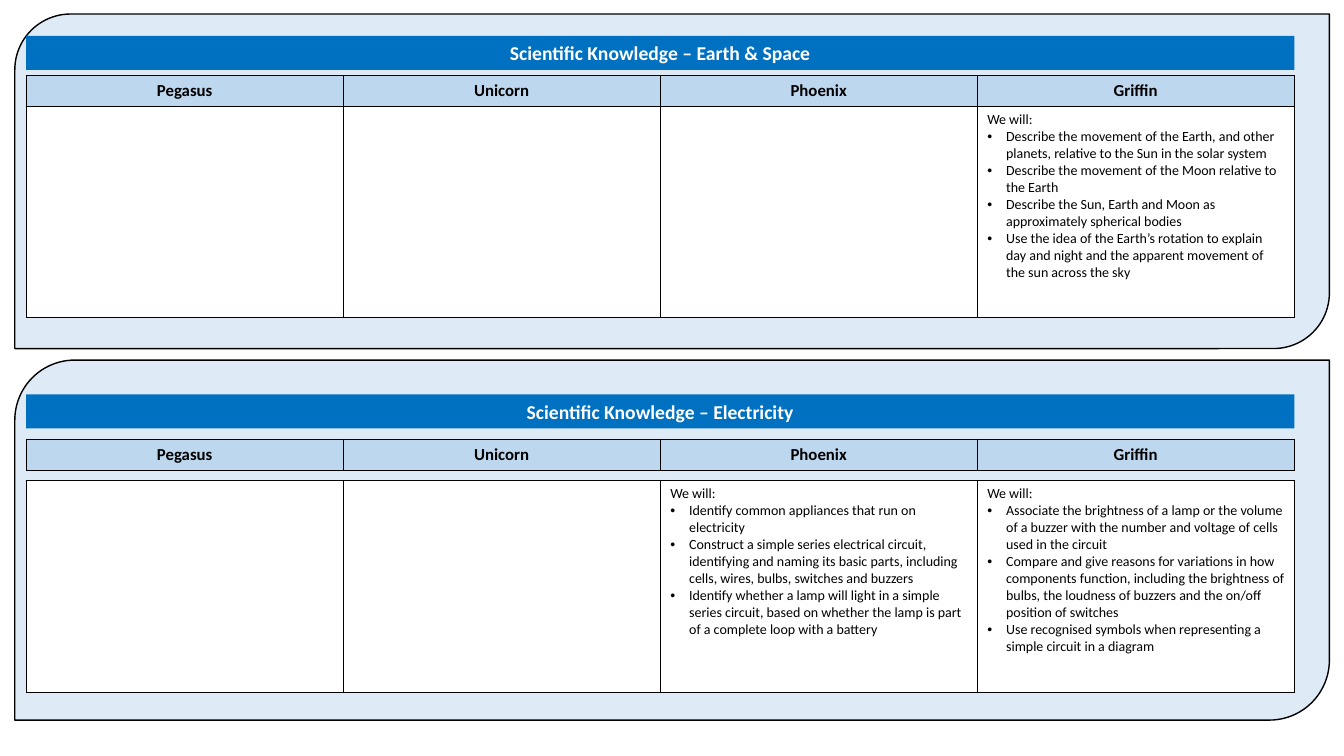
from pptx import Presentation
from pptx.dml.color import RGBColor
from pptx.enum.shapes import MSO_SHAPE as Shape
from pptx.enum.text import MSO_ANCHOR as Anchor, PP_ALIGN as Align
from pptx.oxml import parse_xml
from pptx.oxml.ns import nsdecls
from pptx.util import Pt

BLACK = RGBColor(0x00, 0x00, 0x00)
WHITE = RGBColor(0xFF, 0xFF, 0xFF)
BLUE = RGBColor(0x00, 0x70, 0xC0)
PALE_BLUE = RGBColor(0xDE, 0xEB, 0xF7)
HEADER_BLUE = RGBColor(0xBD, 0xD7, 0xEE)

LEFT, COLUMN_WIDTH = 18.7, 226.45
PANEL_LEFT, PANEL_WIDTH = 10.6, 939
BAR_HEIGHT, HEADER_HEIGHT, BODY_HEIGHT = 24.3, 21.6, 151.2
CLASSES = ["Pegasus", "Unicorn", "Phoenix", "Griffin"]

# Each section: panel top and height, tops of bar, header and body, title, aims by class
SECTIONS = [
    (10, 239, 25.7, 53.8, 75.8, "Scientific Knowledge – Earth & Space", {
        "Griffin": [
            "Describe the movement of the Earth, and other planets, relative to the Sun in the solar system",
            "Describe the movement of the Moon relative to the Earth",
            "Describe the Sun, Earth and Moon as approximately spherical bodies",
            "Use the idea of the Earth’s rotation to explain day and night and the apparent "
            "movement of the sun across the sky",
        ],
    }),
    (257.2, 257.2, 281.7, 313.8, 343.2, "Scientific Knowledge – Electricity", {
        "Phoenix": [
            "Identify common appliances that run on electricity",
            "Construct a simple series electrical circuit, identifying and naming its basic parts, "
            "including cells, wires, bulbs, switches and buzzers",
            "Identify whether a lamp will light in a simple series circuit, based on whether the "
            "lamp is part of a complete loop with a battery",
        ],
        "Griffin": [
            "Associate the brightness of a lamp or the volume of a buzzer with the number and "
            "voltage of cells used in the circuit",
            "Compare and give reasons for variations in how components function, including the "
            "brightness of bulbs, the loudness of buzzers and the on/off position of switches",
            "Use recognised symbols when representing a simple circuit in a diagram",
        ],
    }),
]


def write(paragraph, text, size, color, bold=False):
    paragraph.text = text
    paragraph.font.name = "Calibri"
    paragraph.font.size = Pt(size)
    paragraph.font.bold = bold
    paragraph.font.color.rgb = color


def add_row(top, height, fill):
    """Add a one-row table with thin black borders and return its cells."""
    table = slide.shapes.add_table(
        1, len(CLASSES), Pt(LEFT), Pt(top), Pt(COLUMN_WIDTH * len(CLASSES)), Pt(height)).table
    table.first_row = table.horz_banding = False
    for cell in table.iter_cells():
        properties = cell._tc.get_or_add_tcPr()
        for side in ("lnL", "lnR", "lnT", "lnB"):
            properties.append(parse_xml(
                f'<a:{side} {nsdecls("a")} w="{Pt(0.5)}"><a:solidFill>'
                f'<a:srgbClr val="{BLACK}"/></a:solidFill></a:{side}>'))
        cell.fill.solid()
        cell.fill.fore_color.rgb = fill
    return list(table.iter_cells())


presentation = Presentation()
presentation.slide_width, presentation.slide_height = Pt(960), Pt(540)
slide = presentation.slides.add_slide(presentation.slide_layouts[6])

for panel_top, panel_height, bar_top, header_top, body_top, title, aims in SECTIONS:
    # Rounded panel
    panel = slide.shapes.add_shape(
        Shape.ROUND_2_DIAG_RECTANGLE, Pt(PANEL_LEFT), Pt(panel_top), Pt(PANEL_WIDTH), Pt(panel_height))
    panel.shadow.inherit = False
    panel.fill.solid()
    panel.fill.fore_color.rgb = PALE_BLUE
    panel.line.color.rgb = BLACK
    panel.line.width = Pt(1)

    # Title bar
    bar = slide.shapes.add_shape(
        Shape.RECTANGLE, Pt(LEFT), Pt(bar_top), Pt(COLUMN_WIDTH * len(CLASSES)), Pt(BAR_HEIGHT))
    bar.shadow.inherit = False
    bar.fill.solid()
    bar.fill.fore_color.rgb = BLUE
    bar.line.fill.background()
    bar.text_frame.vertical_anchor = Anchor.MIDDLE
    heading = bar.text_frame.paragraphs[0]
    heading.alignment = Align.CENTER
    write(heading, title, 14, WHITE, bold=True)

    # Class names
    for cell, name in zip(add_row(header_top, HEADER_HEIGHT, HEADER_BLUE), CLASSES):
        paragraph = cell.text_frame.paragraphs[0]
        paragraph.alignment = Align.CENTER
        write(paragraph, name, 12, BLACK, bold=True)

    # Aims for each class
    for cell, name in zip(add_row(body_top, BODY_HEIGHT, WHITE), CLASSES):
        if name not in aims:
            continue
        write(cell.text_frame.paragraphs[0], "We will:", 10, BLACK)
        for aim in aims[name]:
            paragraph = cell.text_frame.add_paragraph()
            write(paragraph, aim, 10, BLACK)
            properties = paragraph._p.get_or_add_pPr()
            properties.set("marL", str(Pt(13.5)))
            properties.set("indent", str(-Pt(13.5)))
            properties.insert(0, parse_xml(f'<a:buChar {nsdecls("a")} char="•"/>'))
            properties.insert(0, parse_xml(f'<a:buFont {nsdecls("a")} typeface="Arial"/>'))

presentation.save("out.pptx")
